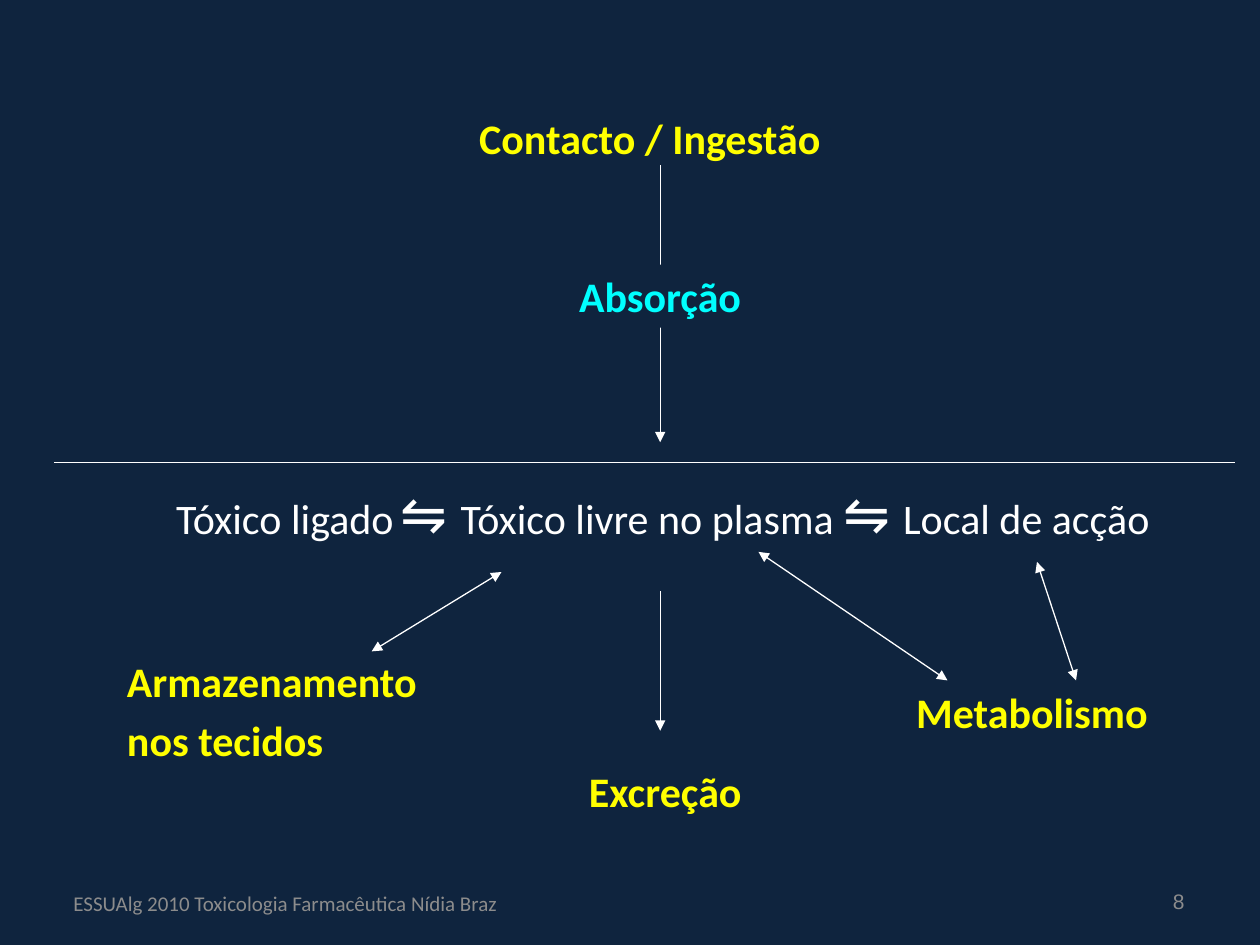
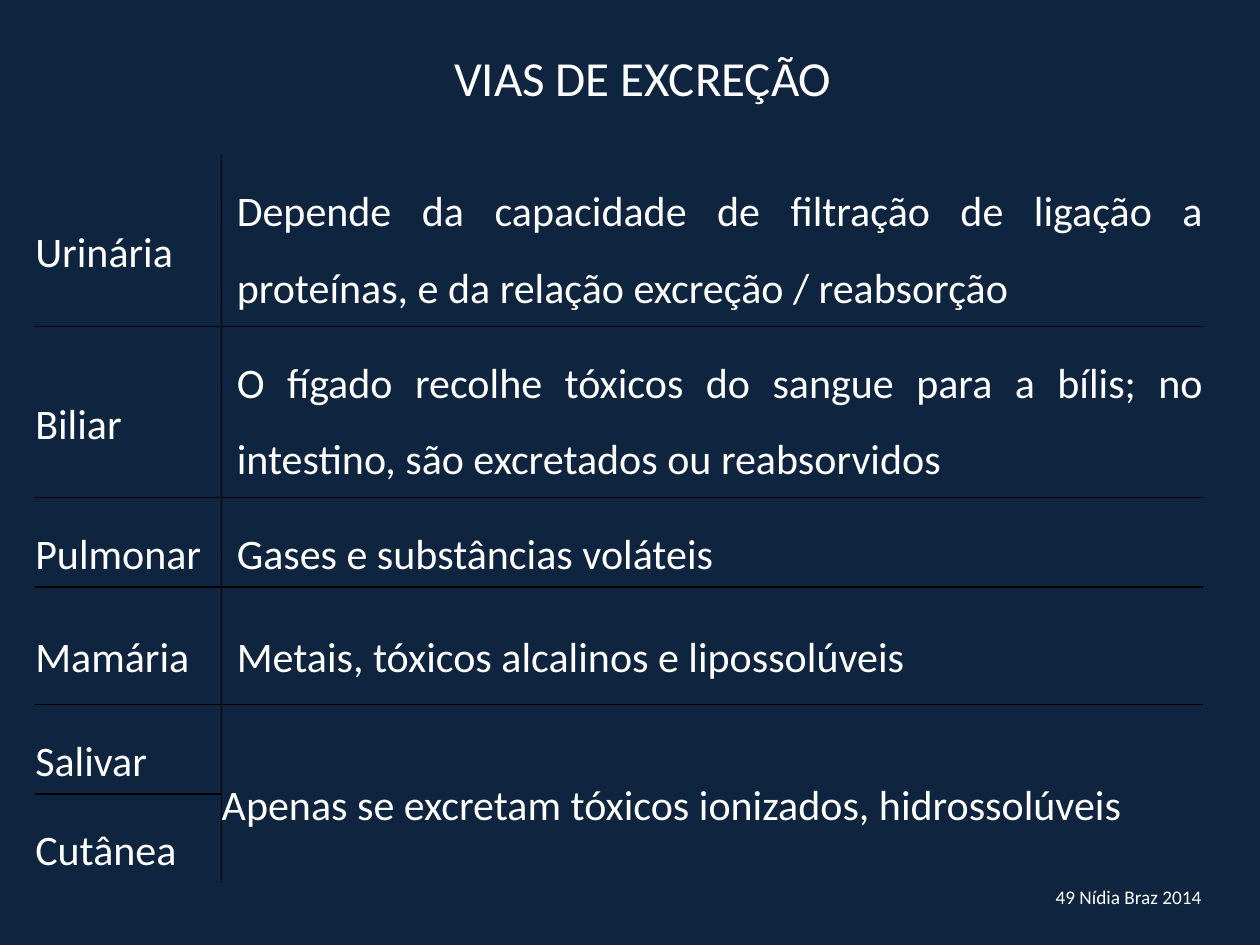
from dataclasses import dataclass
from typing import Any, NamedTuple

from lxml import etree as et
from pptx import Presentation
from pptx import dml  # noqa
from pptx import shapes as sh
from pptx import slide as sl
from pptx import table as tb
from pptx import util as u
from pptx.dml.color import RGBColor
from pptx.enum import shapes, text
from pptx.oxml import ns

PX = 9144
NAVY = RGBColor(0x0F, 0x24, 0x3E)
WHITE = RGBColor(0xFF, 0xFF, 0xFF)
BLACK = RGBColor(0x00, 0x00, 0x00)
GOLD = RGBColor(0xFF, 0xFF, 0x00)
CYAN = RGBColor(0x00, 0xFF, 0xFF)
GREY = RGBColor(0x8C, 0x8C, 0x8C)

LEFT, MID, RIGHT, FULL = (
    text.PP_ALIGN.LEFT,
    text.PP_ALIGN.CENTER,
    text.PP_ALIGN.RIGHT,
    text.PP_ALIGN.JUSTIFY,
)
TOP, HALF = text.MSO_ANCHOR.TOP, text.MSO_ANCHOR.MIDDLE


class Box(NamedTuple):
    x: int
    y: int
    w: int
    h: int


class Run(NamedTuple):
    words: str
    size: int = 24


@dataclass(frozen=True)
class Label:
    box: Box
    lines: tuple[tuple[Run, ...], ...]
    color: RGBColor = WHITE
    bold: bool = False
    align: Any = MID
    anchor: Any = TOP
    face: str = "Calibri"
    fill: RGBColor | None = None
    lead: float = 1.0


@dataclass(frozen=True)
class Line:
    x1: int
    y1: int
    x2: int
    y2: int
    head: bool = False
    tail: bool = True


class Route(NamedTuple):
    name: str
    note: str
    high: int
    align: Any = FULL
    anchor: Any = TOP
    inset: int = 12


def key(words: str, box: Box, color: RGBColor = GOLD, **more: Any) -> Label:
    return Label(box, ((Run(words),),), color, True, **more)


AXIS = 524
LINES = (
    Line(AXIS, 131, AXIS, 351),
    Line(43, 367, 980, 367, tail=False),
    Line(AXIS, 469, AXIS, 580),
    Line(602, 438, 752, 540, head=True),
    Line(295, 517, 398, 454, head=True),
    Line(823, 446, 854, 540, head=True),
)
FLOW = (
    Run("Tóxico ligado"),
    Run(" ", 18),
    Run("⇋ ", 32),
    Run("Tóxico livre no plasma "),
    Run("⇋ ", 32),
    Run("Local de acção"),
)
LABELS = (
    key("Contacto / Ingestão ", Box(350, 84, 339, 50)),
    key("Absorção", Box(406, 210, 236, 50), CYAN, anchor=HALF, fill=NAVY),
    Label(
        Box(91, 525, 284, 92),
        ((Run("Armazenamento"),), (Run("nos tecidos"),)),
        GOLD, True, LEFT, lead=0.75,
    ),
    Label(Box(130, 375, 870, 124), (FLOW,), align=LEFT),
    key("Excreção", Box(398, 603, 260, 50)),
    key("Metabolismo", Box(689, 540, 260, 50)),
    Label(Box(717, 695, 233, 40), ((Run("8", 12),),), GREY,
          align=RIGHT, anchor=HALF, face="Arial"),
    Label(Box(0, 698, 453, 37),
          ((Run("ESSUAlg 2010 Toxicologia Farmacêutica Nídia Braz", 12),),),
          GREY, anchor=HALF),
)
TITLE = Label(Box(74, 33, 872, 77), ((Run("VIAS DE EXCREÇÃO", 28),),))
FOOT = Label(Box(815, 698, 165, 29), ((Run("49 Nídia Braz 2014 ", 11),),))
GRID = Box(28, 123, 927, 575)
COLS = (148, 779)
ROUTES = (
    Route("Urinária", "Depende da capacidade de filtração de ligação a "
          "proteínas, e da relação excreção / reabsorção", 136),
    Route("Biliar", "O fígado recolhe tóxicos do sangue para a bílis; no "
          "intestino, são excretados ou reabsorvidos", 136),
    Route("Pulmonar", "Gases e substâncias voláteis", 70),
    Route("Mamária", "Metais, tóxicos alcalinos e lipossolúveis", 93,
          anchor=HALF),
    Route("Salivar", "Apenas se excretam tóxicos ionizados, hidrossolúveis",
          70, LEFT, HALF, 0),
    Route("Cutânea", "", 70),
)


def apply(item: Any, form: dict[str, Any]) -> None:
    for name, value in form.items():
        setattr(item, name, value)


def place(box: Box) -> tuple[u.Emu, ...]:
    return tuple(u.Emu(side * PX) for side in box)


def style(font: Any, size: int, color: RGBColor, bold: bool, face: str) -> None:
    apply(font, {"name": face, "size": u.Pt(size), "bold": bold})
    font.color.rgb = color


def write(frame: Any, label: Label) -> None:
    apply(frame, {"word_wrap": True, "vertical_anchor": label.anchor,
                  "auto_size": text.MSO_AUTO_SIZE.NONE})
    for i, line in enumerate(label.lines):
        para = frame.add_paragraph() if i else frame.paragraphs[0]
        apply(para, {"alignment": label.align, "line_spacing": label.lead,
                     "space_before": u.Pt(12 if i else 0)})
        for run in line:
            part = para.add_run()
            part.text = run.words
            style(part.font, run.size, label.color, label.bold, label.face)


def draw_label(page: sl.Slide, label: Label) -> None:
    if label.fill is None:
        shape = page.shapes.add_textbox(*place(label.box))
    else:
        shape = page.shapes.add_shape(
            shapes.MSO_SHAPE.RECTANGLE, *place(label.box))
        shape.shadow.inherit = False
        shape.fill.solid()
        shape.fill.fore_color.rgb = label.fill
        shape.line.fill.background()
    write(shape.text_frame, label)


def draw_line(page: sl.Slide, line: Line) -> None:
    ends = (u.Emu(n * PX) for n in (line.x1, line.y1, line.x2, line.y2))
    link = page.shapes.add_connector(shapes.MSO_CONNECTOR.STRAIGHT, *ends)
    link.line.width = u.Pt(0.75)
    link.line.color.rgb = WHITE
    stroke = link.line._get_or_add_ln()
    for tag, shown in (("a:headEnd", line.head), ("a:tailEnd", line.tail)):
        if shown:
            et.SubElement(stroke, ns.qn(tag), type="triangle")
    et.SubElement(link._element.spPr, ns.qn("a:effectLst"))


def draw_edge(cell: tb._Cell, side: str, shown: bool) -> None:
    edge = et.SubElement(cell._tc.get_or_add_tcPr(), ns.qn(f"a:ln{side}"),
                         w=str(u.Pt(1)))
    if shown:
        fill = et.SubElement(edge, ns.qn("a:solidFill"))
        et.SubElement(fill, ns.qn("a:srgbClr"), val=str(BLACK))
    else:
        et.SubElement(edge, ns.qn("a:noFill"))


def fill_cell(cell: tb._Cell, words: str, align: Any, anchor: Any,
              inset: int, edges: dict[str, bool]) -> None:
    for side, shown in edges.items():
        draw_edge(cell, side, shown)
    cell.fill.solid()
    cell.fill.fore_color.rgb = NAVY
    apply(cell, {"margin_left": u.Emu(inset * PX), "margin_right": 0,
                 "margin_top": u.Emu(5 * PX), "margin_bottom": u.Emu(5 * PX),
                 "vertical_anchor": anchor})
    if words:
        para = cell.text_frame.paragraphs[0]
        apply(para, {"alignment": align, "line_spacing": 1.5})
        run = para.add_run()
        run.text = words
        style(run.font, 24, WHITE, False, "Calibri")


def draw_table(page: sl.Slide) -> None:
    table = page.shapes.add_table(len(ROUTES), 2, *place(GRID)).table
    apply(table, {"first_row": False, "horz_banding": False})
    for col, wide in zip(table.columns, COLS):
        col.width = u.Emu(wide * PX)
    last = len(ROUTES) - 1
    for i, route in enumerate(ROUTES):
        table.rows[i].height = u.Emu(route.high * PX)
        fill_cell(table.cell(i, 0), route.name, LEFT, HALF, 0,
                  {"L": False, "R": True, "T": i > 0, "B": i < last})
        fill_cell(table.cell(i, 1), route.note, route.align, route.anchor,
                  route.inset, {"L": True, "R": False, "T": 0 < i < last,
                                "B": i < last - 1})
    table.cell(last - 1, 1).merge(table.cell(last, 1))


def build_flow(page: sl.Slide) -> None:
    for line in LINES:
        draw_line(page, line)
    for label in LABELS:
        draw_label(page, label)


def build_routes(page: sl.Slide) -> None:
    title = page.shapes.title
    apply(title, dict(zip(("left", "top", "width", "height"),
                          place(TITLE.box))))
    write(title.text_frame, TITLE)
    draw_table(page)
    draw_label(page, FOOT)


def main() -> None:
    deck = Presentation()
    apply(deck, {"slide_width": u.Emu(1000 * PX),
                 "slide_height": u.Emu(750 * PX)})
    back = deck.slide_master.background.fill
    back.solid()
    back.fore_color.rgb = NAVY
    for layout, build in ((6, build_flow), (5, build_routes)):
        build(deck.slides.add_slide(deck.slide_layouts[layout]))
    deck.save("out.pptx")


if __name__ == "__main__":
    main()
